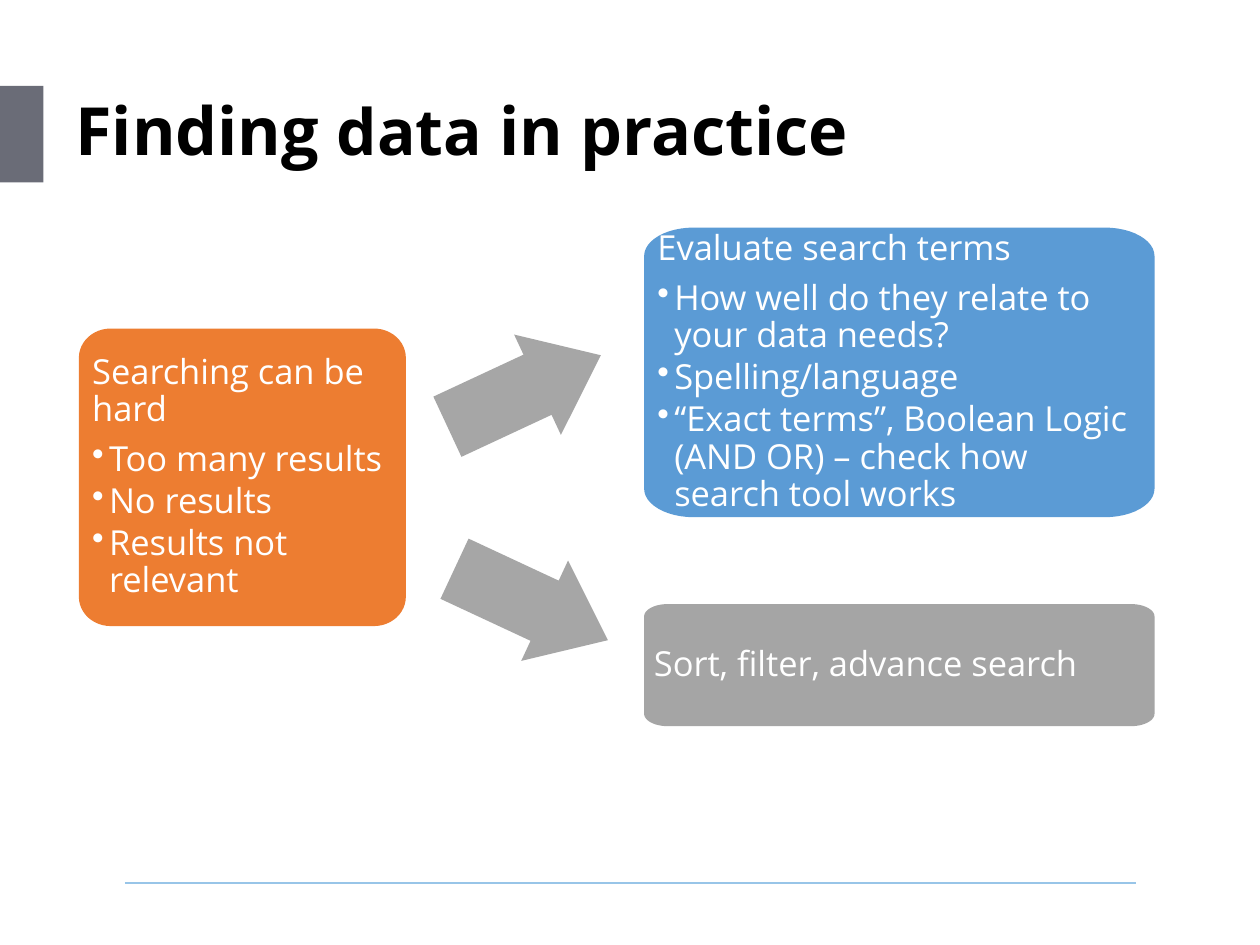
import math
from lxml import etree
from pptx import Presentation
from pptx.dml.color import RGBColor
from pptx.enum import shapes, text
from pptx.oxml import ns
from pptx.util import Inches, Pt

COLORS = {"title": "000000", "accent": "6A6C77", "rule": "98C5E8", "problem": "ED7D31",
          "evaluate": "5B9BD5", "refine": "A5A5A5", "arrow": "A6A6A6", "panel_text": "FFFFFF"}
FONT = "Open Sans"


def paint(shape, color):
    shape.shadow.inherit = False
    shape.fill.solid()
    shape.fill.fore_color.rgb = RGBColor.from_string(COLORS[color])
    shape.line.fill.background()


def rounded_outline(left, top, width, height, radius_x, radius_y):
    right, bottom = left + width - radius_x, top + height - radius_y
    left, top = left + radius_x, top + radius_y
    corners = [(right, bottom), (left, bottom), (left, top), (right, top)]
    points = []
    for quarter, (x, y) in enumerate(corners):
        for step in range(13):
            angle = math.radians(90 * quarter + 7.5 * step)
            points.append((Inches(x + radius_x * math.cos(angle)),
                           Inches(y + radius_y * math.sin(angle))))
    return points


prs = Presentation()
prs.slide_width, prs.slide_height = Inches(14.22), Inches(10.67)
slide = prs.slides.add_slide(prs.slide_layouts[5])

accent = slide.shapes.add_shape(shapes.MSO_SHAPE.RECTANGLE,
                                Inches(0), Inches(0.97), Inches(0.49), Inches(1.09))
paint(accent, "accent")

rule = slide.shapes.add_connector(shapes.MSO_CONNECTOR.STRAIGHT,
                                  Inches(1.41), Inches(9.97), Inches(12.82), Inches(9.97))
rule.line.color.rgb = RGBColor.from_string(COLORS["rule"])
rule.line.width = Pt(2)
etree.SubElement(rule._element.spPr, ns.qn("a:effectLst"))

title = slide.shapes.title
title.left, title.top = Inches(0.75), Inches(0.97)
title.width, title.height = Inches(12.07), Inches(1.09)
title.text_frame.vertical_anchor = text.MSO_ANCHOR.MIDDLE
title.text_frame.auto_size = text.MSO_AUTO_SIZE.NONE
heading = title.text_frame.paragraphs[0]
heading.alignment = text.PP_ALIGN.LEFT
heading.line_spacing = 0.9
for words, size in [("Finding ", 54), ("data", 52), (" in practice", 54)]:
    run = heading.add_run()
    run.text = words
    run.font.name, run.font.size, run.font.bold = FONT, Pt(size), True
    run.font.color.rgb = RGBColor.from_string(COLORS["title"])

panels = [
    ("problem", (0.89, 3.71, 3.69, 3.36), (0.36, 0.33), 0.15,
     ["Searching can be hard", "Too many results", "No results", "Results not relevant"]),
    ("evaluate", (7.27, 2.57, 5.76, 3.27), (0.56, 0.32), 0.15,
     ["Evaluate search terms", "How well do they relate to your data needs?",
      "Spelling/language",
      "“Exact terms”, Boolean Logic (AND OR) – check how search tool works"]),
    ("refine", (7.27, 6.82, 5.76, 1.38), (0.27, 0.14), 0.11,
     ["Sort, filter, advance search"]),
]
for color, box, radii, inset, lines in panels:
    outline = rounded_outline(*box, *radii)
    builder = slide.shapes.build_freeform(*outline[0])
    builder.add_line_segments(outline[1:], close=True)
    panel = builder.convert_to_shape()
    paint(panel, color)
    frame = panel.text_frame
    frame.word_wrap = True
    frame.vertical_anchor = text.MSO_ANCHOR.MIDDLE
    frame.margin_left = frame.margin_right = Inches(inset)
    frame.margin_top = frame.margin_bottom = Inches(inset)
    frame.text = "\n".join(lines)
    for index, paragraph in enumerate(frame.paragraphs):
        paragraph.alignment = text.PP_ALIGN.LEFT
        paragraph.line_spacing = 0.9
        paragraph.space_after = Pt(4 if index else 10)
        if index:
            paragraph.level = 1
            properties = paragraph._p.get_or_add_pPr()
            properties.set("marL", str(Inches(0.19)))
            properties.set("indent", str(Inches(-0.19)))
            etree.SubElement(properties, ns.qn("a:buChar"), char="•")
        run = paragraph.runs[0]
        run.font.name, run.font.size = FONT, Pt(28)
        run.font.color.rgb = RGBColor.from_string(COLORS["panel_text"])

for left, top, rotation in [(4.96, 3.79, -25), (5.04, 6.2, 25)]:
    arrow = slide.shapes.add_shape(shapes.MSO_SHAPE.RIGHT_ARROW,
                                   Inches(left), Inches(top), Inches(1.91), Inches(1.25))
    paint(arrow, "arrow")
    arrow.adjustments[0], arrow.adjustments[1] = 0.6, 0.63
    arrow.rotation = rotation

prs.save("out.pptx")
